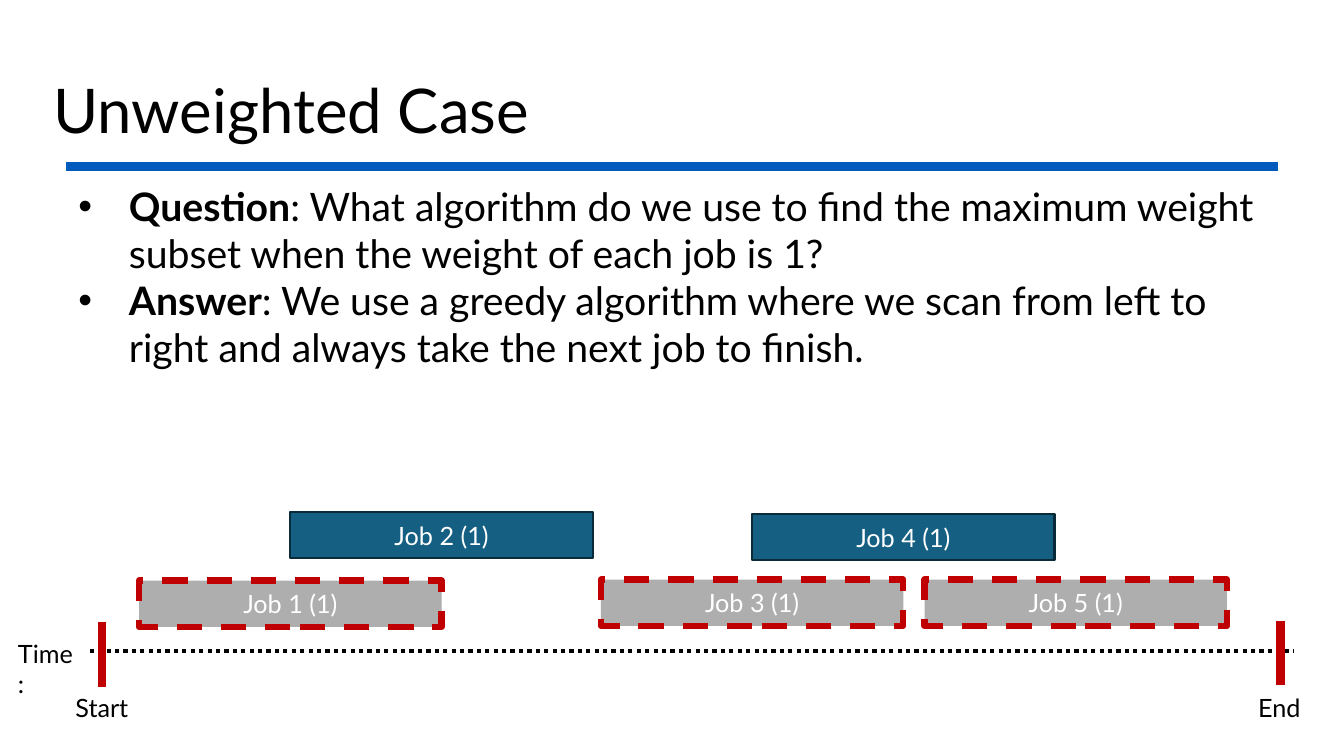
import pptx
import pptx.util
import pptx.dml.color
import pptx.enum.dml
import pptx.enum.shapes
import pptx.enum.text
import pptx.oxml.ns
import lxml.etree

Inches = pptx.util.Inches
Pt = pptx.util.Pt
DASH = pptx.enum.dml.MSO_LINE
ANCHOR = pptx.enum.text.MSO_ANCHOR
ALIGN = pptx.enum.text.PP_ALIGN

FONT = "Lato"
BLACK, WHITE, RED = "000000", "FFFFFF", "C00000"
JOB_W, JOB_H = 3, 0.46

# name, left, top, taken by the greedy algorithm
JOBS = [
    ("Job 1 (1)", 1.38, 5.76, True),
    ("Job 2 (1)", 2.88, 5.08, False),
    ("Job 3 (1)", 5.96, 5.75, True),
    ("Job 5 (1)", 9.17, 5.75, True),
    ("Job 4 (1)", 7.46, 5.1, False),
]

POINTS = [
    ("Question", ": What algorithm do we use to find the maximum weight "
                 "subset when the weight of each job is 1?"),
    ("Answer", ": We use a greedy algorithm where we scan from left to "
               "right and always take the next job to finish."),
]


def rgb(color):
    return pptx.dml.color.RGBColor.from_string(color)


def set_font(p, size, color=BLACK):
    p.font.name = FONT
    p.font.size = Pt(size)
    p.font.color.rgb = rgb(color)


def set_line(line, color, width, dash=None):
    line.color.rgb = rgb(color)
    line.width = Pt(width)
    if dash is not None:
        line.dash_style = dash


def add_line(s, x1, y1, x2, y2, color, width, dash=None):
    kind = pptx.enum.shapes.MSO_CONNECTOR.STRAIGHT
    sp = s.shapes.add_connector(kind, Inches(x1), Inches(y1), Inches(x2), Inches(y2))
    set_line(sp.line, color, width, dash)
    lxml.etree.SubElement(sp._element.spPr, pptx.oxml.ns.qn("a:effectLst"))


def add_box(s, x, y, w, h, wrap=True):
    sp = s.shapes.add_textbox(Inches(x), Inches(y), Inches(w), Inches(h))
    sp.text_frame.word_wrap = wrap
    return sp.text_frame


def add_label(s, text, x, y, w, h, size=18, wrap=False):
    tf = add_box(s, x, y, w, h, wrap)
    p = tf.paragraphs[0]
    p.text = text
    set_font(p, size)
    return tf


def add_bullet(p, indent):
    pPr = p._p.get_or_add_pPr()
    pPr.set("marL", str(Inches(indent)))
    pPr.set("indent", str(-Inches(indent)))
    qn = pptx.oxml.ns.qn
    bullet_font = lxml.etree.Element(qn("a:buFont"), typeface="Arial")
    bullet = lxml.etree.Element(qn("a:buChar"), char="•")
    pPr.insert(0, bullet_font)
    pPr.insert(1, bullet)


def add_points(s, points, x, y, w, h):
    tf = add_box(s, x, y, w, h)
    for i, (term, text) in enumerate(points):
        p = tf.paragraphs[0] if i == 0 else tf.add_paragraph()
        set_font(p, 28)
        add_bullet(p, 0.5)
        r = p.add_run()
        r.text = term
        r.font.bold = True
        p.add_run().text = text


def add_job(s, name, x, y, taken):
    sp = s.shapes.add_shape(pptx.enum.shapes.MSO_SHAPE.RECTANGLE,
                            Inches(x), Inches(y), Inches(JOB_W), Inches(JOB_H))
    sp.shadow.inherit = False
    sp.fill.solid()
    sp.fill.fore_color.rgb = rgb("AEAEAE" if taken else "156082")
    if taken:
        set_line(sp.line, RED, 4.5, DASH.DASH)
    else:
        set_line(sp.line, "092A39", 1.5)
    tf = sp.text_frame
    tf.vertical_anchor = ANCHOR.MIDDLE
    p = tf.paragraphs[0]
    p.text = name
    p.alignment = ALIGN.CENTER
    set_font(p, 18, WHITE)


def main():
    prs = pptx.Presentation()
    prs.slide_width = Inches(13.33)
    prs.slide_height = Inches(7.5)
    s = prs.slides.add_slide(prs.slide_layouts[6])

    # Title and rule
    tf = add_label(s, "Unweighted Case", 0.43, 0.4, 12.71, 1.45, 44, True)
    tf.vertical_anchor = ANCHOR.MIDDLE
    tf.paragraphs[0].line_spacing = 0.9
    add_line(s, 0.65, 1.65, 12.68, 1.65, "005BBC", 6)

    # Question and answer
    add_points(s, POINTS, 0.68, 1.76, 12.02, 5.22)

    # Time axis with start and end marks
    add_line(s, 0.89, 6.46, 12.83, 6.46, BLACK, 3, DASH.ROUND_DOT)
    add_line(s, 1.01, 6.17, 1.01, 6.82, RED, 6)
    add_line(s, 12.7, 6.16, 12.7, 6.8, RED, 6)
    add_label(s, "Start", 0.65, 6.82, 0.73, 0.4)
    add_label(s, "End", 12.38, 6.82, 0.62, 0.4)
    add_label(s, "Time:", 0.08, 6.28, 0.75, 0.4, wrap=True)

    # Jobs
    for job in JOBS:
        add_job(s, *job)

    prs.save("out.pptx")


if __name__ == "__main__":
    main()
